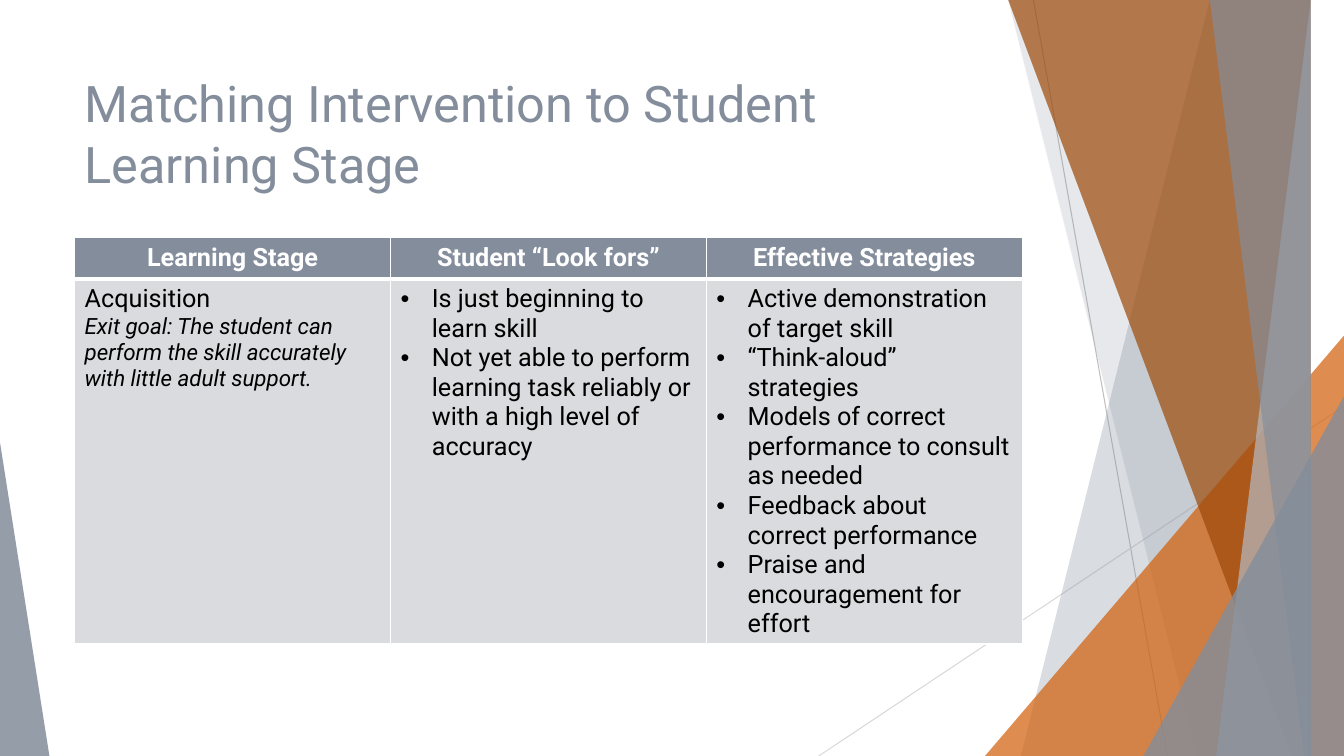
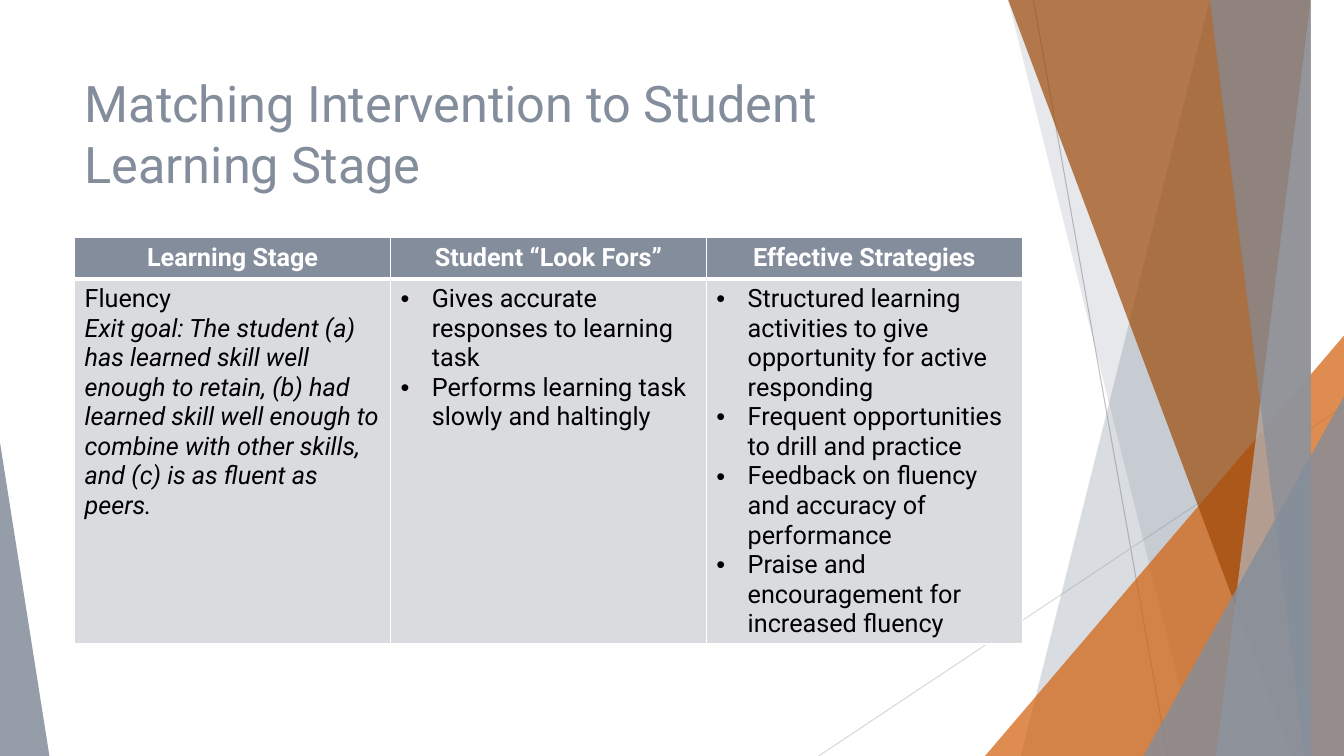
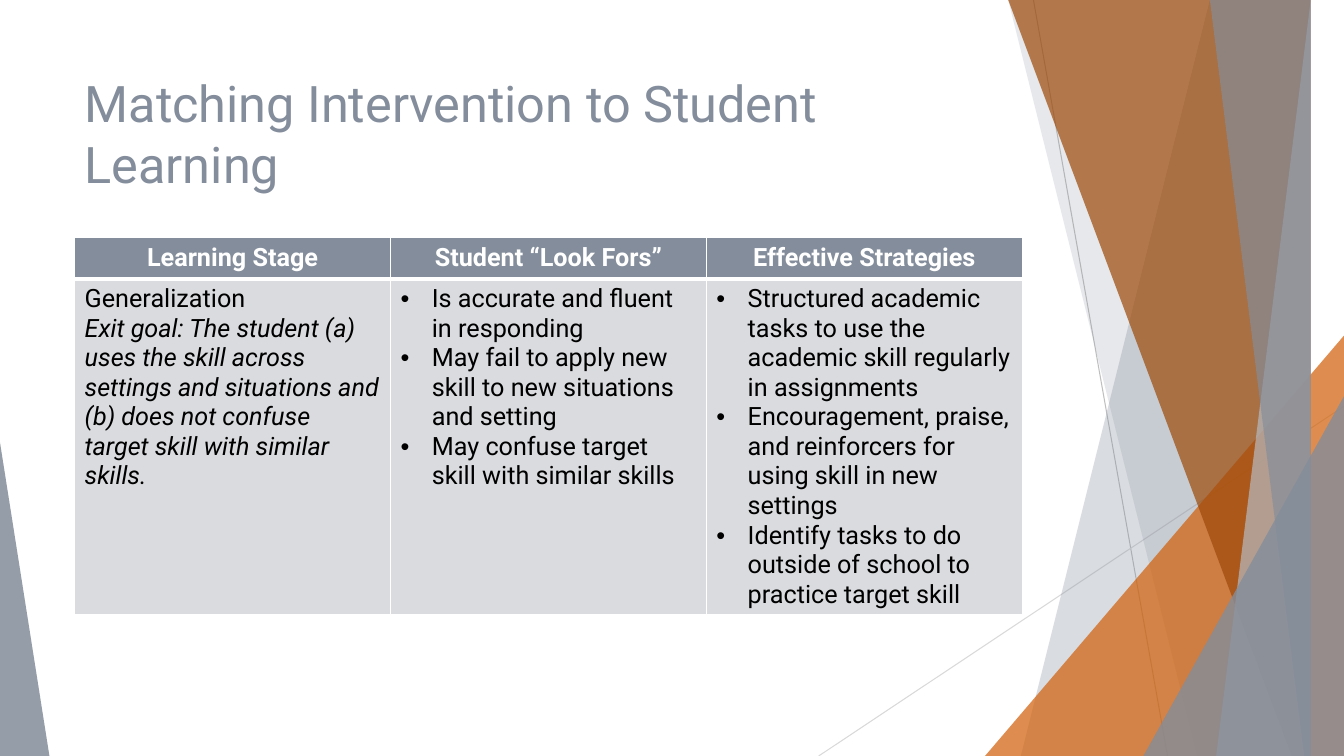
from lxml import etree
from pptx import Presentation
from pptx.dml.color import RGBColor
from pptx.enum.shapes import MSO_CONNECTOR, MSO_SHAPE
from pptx.enum.text import MSO_ANCHOR, MSO_AUTO_SIZE, PP_ALIGN
from pptx.oxml import parse_xml
from pptx.oxml.ns import nsdecls, qn
from pptx.util import Inches, Pt

TRIANGLE = MSO_SHAPE.ISOSCELES_TRIANGLE
STRAIGHT = MSO_CONNECTOR.STRAIGHT
LEFT, CENTER = PP_ALIGN.LEFT, PP_ALIGN.CENTER

# Shared look
WIDE, HIGH = 13.33, 7.5
SLATE, PALE, MIST = "838D9B", "B5BBC3", "D9DBDE"
ORANGE, RUST = "D2610C", "9D4909"
WHITE, BLACK = "FFFFFF", "000000"
BASE = {"name": "Roboto", "bold": False, "italic": False}
TITLE = {**BASE, "size": Pt(36)}
BODY = {**BASE, "size": Pt(18)}
HEAD = {**BODY, "bold": True}
GOAL = {**BODY, "italic": True}
SMALL = {**GOAL, "size": Pt(16)}

# Side art: lines, then slanted bands and triangles from back to front
LINES = [((10.25, 0), (11.58, HIGH), "BFBFBF"),
         ((WIDE, 4.03), (8.12, HIGH), "D9D9D9")]
ART = [  # band: top x, bottom x; triangle: left, top, width, peak
    ("band", (12.28, 10.04), SLATE, 30),
    ("band", (10.5, 11.83), SLATE, 20),
    ("tri", (9.77, 3.33, 3.56, 1), ORANGE, 72),
    ("band", (10.21, 12.91), RUST, 70),
    ("band", (13.03, 11.92), PALE, 70),
    ("band", (11.96, 13.18), SLATE, 65),
    ("tri", (11.34, 3.93, 1.99, 1), SLATE, 80),
    ("tri", (0, 4.39, 0.49, 0), SLATE, 85),
]

# Content: title, middle heading, stage, goal, goal style, signs, strategies
TOPIC = "Matching Intervention to Student Learning"
STAGES = [
    (TOPIC + " Stage", "Student “Look fors”", "Acquisition",
     "Exit goal: The student can perform the skill accurately with little "
     "adult support.", SMALL,
     ["Is just beginning to learn skill",
      "Not yet able to perform learning task reliably or with a high level "
      "of accuracy"],
     ["Active demonstration of target skill",
      "“Think-aloud” strategies",
      "Models of correct performance to consult as needed",
      "Feedback about correct performance",
      "Praise and encouragement for effort"]),
    (TOPIC + " Stage", "Student “Look Fors”", "Fluency",
     "Exit goal: The student (a) has learned skill well enough to retain, "
     "(b) had learned skill well enough to combine with other skills, and "
     "(c) is as fluent as peers.", GOAL,
     ["Gives accurate responses to learning task",
      "Performs learning task slowly and haltingly"],
     ["Structured learning activities to give opportunity for active "
      "responding",
      "Frequent opportunities to drill and practice",
      "Feedback on fluency and accuracy of performance",
      "Praise and encouragement for increased fluency"]),
    (TOPIC, "Student “Look Fors”", "Generalization",
     "Exit goal: The student (a) uses the skill across settings and "
     "situations and (b) does not confuse target skill with similar "
     "skills.", GOAL,
     ["Is accurate and fluent in responding",
      "May fail to apply new skill to new situations and setting",
      "May confuse target skill with similar skills"],
     ["Structured academic tasks to use the academic skill regularly in "
      "assignments",
      "Encouragement, praise, and reinforcers for using skill in new "
      "settings",
      "Identify tasks to do outside of school to practice target skill"]),
]


def paint(fill, color, alpha=100):
    fill.solid()
    fill.fore_color.rgb = RGBColor.from_string(color)
    if alpha < 100:
        for clr in fill._xPr.iter(qn("a:srgbClr")):
            etree.SubElement(clr, qn("a:alpha")).set("val", str(alpha * 1000))


def write(par, text, style, color, align=LEFT):
    par.alignment = align
    run = par.add_run()
    run.text = text
    for key, value in style.items():
        setattr(run.font, key, value)
    paint(run.font.fill, color)


def bullet(par):
    props = par._p.get_or_add_pPr()
    props.set("marL", str(Inches(0.31)))
    props.set("indent", str(-Inches(0.31)))
    etree.SubElement(props, qn("a:buFont")).set("typeface", "Arial")
    etree.SubElement(props, qn("a:buChar")).set("char", "•")


# Side art
def add_line(shapes, start, end, color):
    line = shapes.add_connector(STRAIGHT, *map(Inches, start + end))
    paint(line.line.fill, color)
    line.line.width = Pt(0.75)
    etree.SubElement(line._element.spPr, qn("a:effectLst"))


def add_band(shapes, top, base):
    edge = shapes.build_freeform(top, -0.01, scale=Inches(1))
    edge.add_line_segments([(WIDE, -0.01), (WIDE, HIGH), (base, HIGH)])
    return edge.convert_to_shape()


def add_tri(shapes, left, top, width, peak):
    shape = shapes.add_shape(
        TRIANGLE, *map(Inches, (left, top, width, HIGH - top)))
    shape.adjustments[0] = peak
    return shape


def add_art(slide):
    group = slide.shapes.add_group_shape()
    for line in LINES:
        add_line(group.shapes, *line)
    makers = {"band": add_band, "tri": add_tri}
    for kind, place, color, alpha in ART:
        shape = makers[kind](group.shapes, *place)
        shape.shadow.inherit = False
        shape.line.fill.background()
        paint(shape.fill, color, alpha)
    return group.element


def share_art(slide, layout):
    """Move the side art to the layout, behind its title."""
    art = add_art(slide)
    for num, item in enumerate(art.iter(qn("p:cNvPr")), 100):
        item.set("id", str(num))
    layout.element.cSld.spTree.insert(2, art)


# Title and table
def set_layout(layout):
    for holder in list(layout.placeholders):
        if holder.placeholder_format.idx:
            holder.element.getparent().remove(holder.element)
        else:
            place = {"left": 0.74, "top": 0.67, "width": 9.4, "height": 1.44}
            for key, value in place.items():
                setattr(holder, key, Inches(value))


def add_title(slide, text):
    frame = slide.shapes.title.text_frame
    look = {"word_wrap": True, "auto_size": MSO_AUTO_SIZE.NONE,
            "vertical_anchor": MSO_ANCHOR.TOP}
    for key, value in look.items():
        setattr(frame, key, value)
    write(frame.paragraphs[0], text, TITLE, SLATE)


def set_cell(cell, color, sides):
    props = cell._tc.get_or_add_tcPr()
    for side, width in sides.items():
        props.append(parse_xml(
            f'<a:ln{side} {nsdecls("a")} w="{Pt(width)}"><a:solidFill>'
            f'<a:srgbClr val="{WHITE}"/></a:solidFill></a:ln{side}>'))
    paint(cell.fill, color)


def fill_list(cell, items):
    frame = cell.text_frame
    for num, item in enumerate(items):
        par = frame.add_paragraph() if num else frame.paragraphs[0]
        write(par, item, BODY, BLACK)
        bullet(par)


def add_grid(slide, look, stage, goal, style, signs, plans):
    table = slide.shapes.add_table(
        2, 3, *map(Inches, (0.74, 2.36, 9.4, 0.82))).table
    table.horz_banding = False
    heads = ("Learning Stage", look, "Effective Strategies")
    for col, text in enumerate(heads):
        head = table.cell(0, col)
        set_cell(head, SLATE, {"L": 1, "R": 1, "T": 1, "B": 3})
        write(head.text_frame.paragraphs[0], text, HEAD, WHITE, CENTER)
        set_cell(table.cell(1, col), MIST, {"L": 1, "R": 1, "T": 3, "B": 1})
    frame = table.cell(1, 0).text_frame
    write(frame.paragraphs[0], stage, BODY, BLACK)
    write(frame.add_paragraph(), goal, style, BLACK)
    fill_list(table.cell(1, 1), signs)
    fill_list(table.cell(1, 2), plans)


def main():
    deck = Presentation()
    deck.slide_width, deck.slide_height = Inches(WIDE), Inches(HIGH)
    layout = deck.slide_layouts.get_by_name("Title Only")
    set_layout(layout)
    for num, (title, *rest) in enumerate(STAGES):
        slide = deck.slides.add_slide(layout)
        if num == 0:
            share_art(slide, layout)
        add_title(slide, title)
        add_grid(slide, *rest)
    deck.save("out.pptx")


if __name__ == "__main__":
    main()
